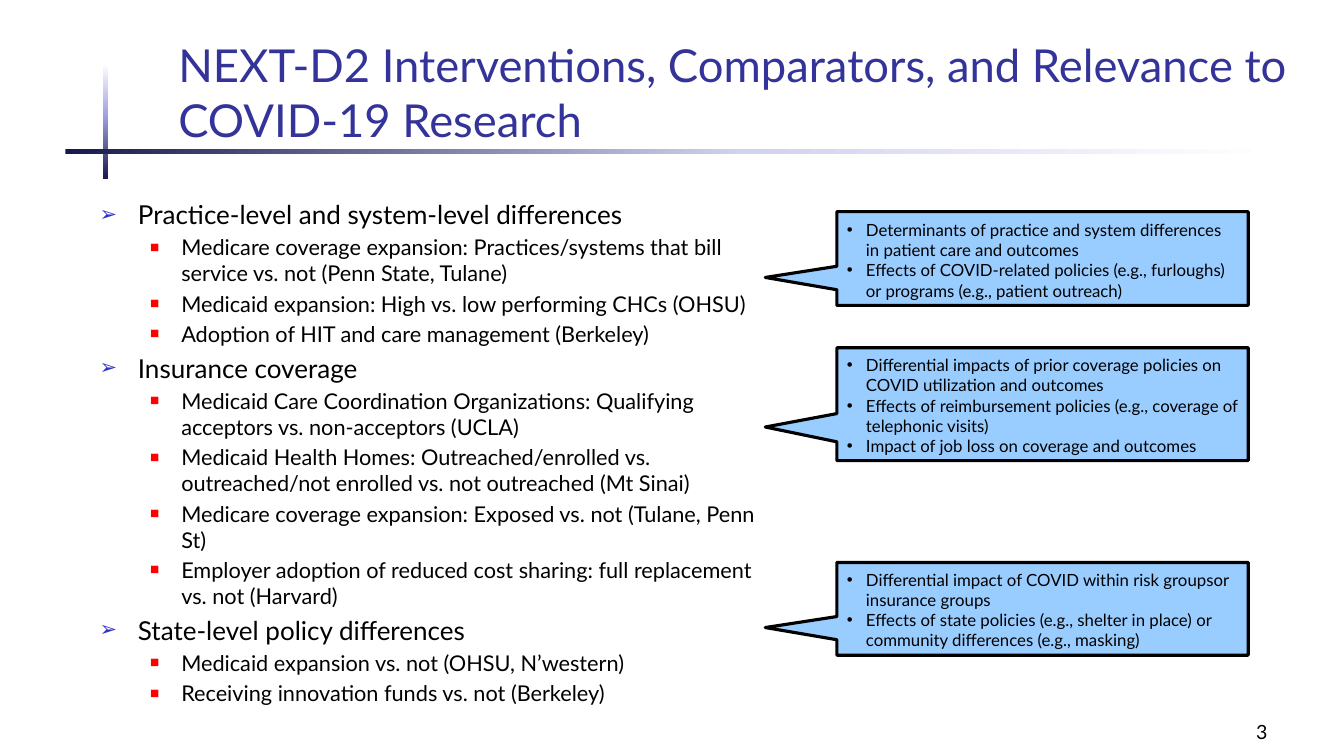
from lxml.etree import SubElement as Sub
from pptx import Presentation
from pptx.dml.color import RGBColor
from pptx.enum.shapes import MSO_SHAPE as Shape
from pptx.enum.text import MSO_ANCHOR as Anchor, PP_ALIGN as Align
from pptx.oxml.ns import qn
from pptx.util import Inches, Pt

FONT = "Lato"
HEAD = {"size": 18.6, "left": 0.38, "hang": 0.38, "before": 3.7,
        "mark": "➢", "tint": "3333CC", "scale": 80}
ITEM = {"size": 15.5, "left": 0.81, "hang": 0.31, "before": 3.1,
        "mark": "■", "tint": "FF0000", "scale": 70}
NOTE = {"size": 12, "left": 0.19, "hang": 0.19, "before": 0,
        "mark": "•", "tint": "000000", "scale": 100}

TITLE = "NEXT-D2 Interventions, Comparators, and Relevance to COVID-19 Research"
TOPICS = {
    "Practice-level and system-level differences": [
        "Medicare coverage expansion: Practices/systems that bill service vs. not (Penn State, Tulane)",
        "Medicaid expansion: High vs. low performing CHCs (OHSU)",
        "Adoption of HIT and care management (Berkeley)"],
    "Insurance coverage": [
        "Medicaid Care Coordination Organizations: Qualifying acceptors vs. non-acceptors (UCLA)",
        "Medicaid Health Homes: Outreached/enrolled vs. outreached/not enrolled vs. not outreached (Mt Sinai)",
        "Medicare coverage expansion: Exposed vs. not (Tulane, Penn St)",
        "Employer adoption of reduced cost sharing: full replacement vs. not (Harvard)"],
    "State-level policy differences": [
        "Medicaid expansion vs. not (OHSU, N’western)",
        "Receiving innovation funds vs. not (Berkeley)"],
}
# top, height, lines
NOTES = [
    (2.1, 0.93, [
        "Determinants of practice and system differences in patient care and outcomes",
        "Effects of COVID-related policies (e.g., furloughs) or programs (e.g., patient outreach)"]),
    (3.45, 1.12, [
        "Differential impacts of prior coverage policies on COVID utilization and outcomes",
        "Effects of reimbursement policies (e.g., coverage of telephonic visits)",
        "Impact of job loss on coverage and outcomes"]),
    (5.58, 0.92, [
        "Differential impact of COVID within risk groupsor insurance groups",
        "Effects of state policies (e.g., shelter in place) or community differences (e.g., masking)"]),
]


def color(code):
    return RGBColor.from_string(code)


def style(para, size, code="000000"):
    values = {"name": FONT, "size": Pt(size), "bold": False}
    for key, value in values.items():
        setattr(para.font, key, value)
    para.font.color.rgb = color(code)


def bullet(para, look):
    """Give a paragraph its hanging indent and mark."""
    props = para._p.get_or_add_pPr()
    props.set("marL", str(Inches(look["left"])))
    props.set("indent", str(-Inches(look["hang"])))
    tint = Sub(props, qn("a:buClr"))
    Sub(tint, qn("a:srgbClr"), val=look["tint"])
    Sub(props, qn("a:buSzPct"), val=str(look["scale"] * 1000))
    Sub(props, qn("a:buFont"), typeface="Arial")
    Sub(props, qn("a:buChar"), char=look["mark"])


def fill_list(frame, rows):
    """Write (text, look) rows as bulleted paragraphs."""
    frame.word_wrap = True
    for num, (text, look) in enumerate(rows):
        para = frame.add_paragraph() if num else frame.paragraphs[0]
        para.text = text
        para.alignment = Align.LEFT
        bullet(para, look)
        if num:
            para.space_before = Pt(look["before"])
        style(para, look["size"])


def text_box(slide, box, anchor):
    frame = slide.shapes.add_textbox(*map(Inches, box)).text_frame
    frame.word_wrap = True
    frame.vertical_anchor = anchor
    return frame


def label(slide, box, text, size, code, align):
    """Place one line of text at the bottom of a box."""
    para = text_box(slide, box, Anchor.BOTTOM).paragraphs[0]
    para.text = text
    para.alignment = align
    style(para, size, code)


def fade_bar(slide, box, mid, angle):
    """Draw a bar that fades from navy through mid to white."""
    bar = slide.shapes.add_shape(Shape.RECTANGLE, *map(Inches, box))
    bar.shadow.inherit = False
    bar.line.fill.background()
    bar.fill.gradient()
    grad = bar._element.spPr.find(qn("a:gradFill"))
    for part in list(grad):
        grad.remove(part)
    stops = Sub(grad, qn("a:gsLst"))
    for pos, code in ((0, "19194D"), (56, mid), (100, "FFFFFF")):
        stop = Sub(stops, qn("a:gs"), pos=str(pos * 1000))
        Sub(stop, qn("a:srgbClr"), val=code)
    Sub(grad, qn("a:lin"), ang=str(angle * 60000), scaled="0")


def header(slide, box):
    left, top, width, height = box
    fade_bar(slide, (left + 0.37, top + 0.38, 0.05, 1.15), "A3A3E0", 270)
    fade_bar(slide, (left, top + height - 0.02, 12, 0.05), "D1D1F0", 0)
    label(slide, (left + 1.02, top, width - 1.02, height),
          TITLE, 32.4, "333399", Align.LEFT)


def topics(slide, box):
    rows = []
    for head, items in TOPICS.items():
        rows += [(head, HEAD)] + [(item, ITEM) for item in items]
    fill_list(text_box(slide, box, Anchor.TOP), rows)


def callout(slide, box, lines):
    note = slide.shapes.add_shape(Shape.RECTANGULAR_CALLOUT, *map(Inches, box))
    note.shadow.inherit = False
    note.adjustments[0], note.adjustments[1] = -0.674, 0.202
    note.fill.solid()
    note.fill.fore_color.rgb = color("99CCFF")
    note.line.color.rgb = color("000000")
    note.line.width = Pt(2.25)
    note.text_frame.vertical_anchor = Anchor.BOTTOM
    fill_list(note.text_frame, [(line, NOTE) for line in lines])


def main():
    deck = Presentation()
    deck.slide_width, deck.slide_height = Inches(13.33), Inches(7.5)
    slide = deck.slides.add_slide(deck.slide_layouts[6])
    header(slide, (0.65, 0.25, 12.4, 1.25))
    topics(slide, (0.89, 1.92, 6.94, 4.79))
    for top, height, lines in NOTES:
        callout(slide, (8.3, top, 4.08, height), lines)
    label(slide, (9.89, 6.92, 2.78, 0.5), "3", 14, "000000", Align.RIGHT)
    deck.save("out.pptx")


if __name__ == "__main__":
    main()
